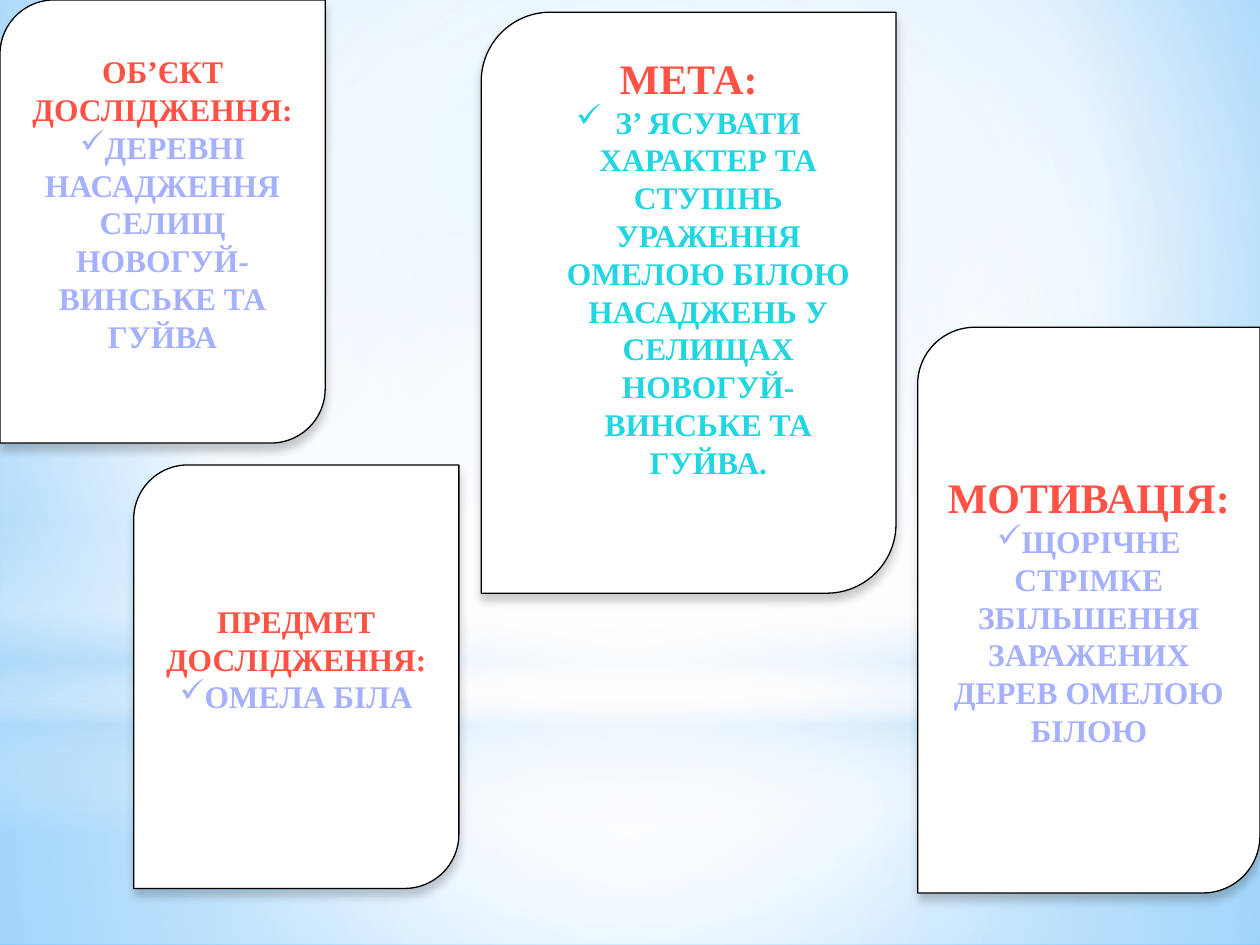
from typing import NamedTuple

from lxml.etree import SubElement
from pptx import Presentation
from pptx.dml.color import RGBColor
from pptx.enum.shapes import MSO_SHAPE
from pptx.enum.text import MSO_ANCHOR, PP_ALIGN
from pptx.oxml import parse_xml
from pptx.oxml.ns import nsdecls, qn
from pptx.util import Pt

COLORS = {
    "white": "FFFFFF",
    "black": "000000",
    "sky": "9ED5FF",
    "azure": "5BB9FF",
    "mist": "B4DCFA",
    "red": "FF5244",
    "cyan": "21D6E0",
    "lilac": "A5B0FF",
}
FONT = "Times New Roman"
BODY_SIZE = 18
BLANK_LINE = 20.7
CENTER = (50, 50, 50, 50)


class Stop(NamedTuple):
    pos: int
    color: str
    alpha: int = 100


class Glow(NamedTuple):
    """A background layer; without a focus its gradient runs downwards."""
    shape: MSO_SHAPE
    top: float
    height: float
    stops: list[Stop]
    focus: tuple[int, int, int, int] | None = CENTER


class Card(NamedTuple):
    left: float
    top: float
    width: float
    height: float
    title: str
    title_size: int
    body: str
    body_color: str = "lilac"
    indent: float = 0
    lines_below: int = 0


BACKGROUND = [Stop(0, "sky"), Stop(60, "white"), Stop(100, "azure")]

GLOWS = [
    Glow(MSO_SHAPE.RECTANGLE, 402, 138,
         [Stop(0, "white", 91), Stop(37, "white", 76), Stop(100, "mist", 79)]),
    Glow(MSO_SHAPE.RECTANGLE, 0, 402,
         [Stop(0, "white", 89), Stop(48, "white", 62), Stop(100, "mist", 79)]),
    Glow(MSO_SHAPE.RECTANGLE, 297, 180,
         [Stop(0, "white", 0), Stop(29, "white", 30), Stop(45, "mist", 40),
          Stop(55, "white", 26), Stop(65, "mist", 60), Stop(100, "white", 0)],
         None),
    Glow(MSO_SHAPE.OVAL, 126, 402, [Stop(0, "white"), Stop(56, "white", 0)]),
]

CARDS = [
    Card(275, 7, 237, 332, "МЕТА:", 24,
         "З’ ЯСУВАТИ ХАРАКТЕР ТА СТУПІНЬ УРАЖЕННЯ ОМЕЛОЮ БІЛОЮ НАСАДЖЕНЬ "
         "У СЕЛИЩАХ НОВОГУЙ-ВИНСЬКЕ ТА ГУЙВА.", "cyan", 22.5, 2),
    Card(524.4, 187, 195.6, 323.3, "МОТИВАЦІЯ:", 24,
         "ЩОРІЧНЕ СТРІМКЕ ЗБІЛЬШЕННЯ ЗАРАЖЕНИХ ДЕРЕВ ОМЕЛОЮ БІЛОЮ"),
    Card(76.4, 265.7, 185.8, 242, "ПРЕДМЕТ ДОСЛІДЖЕННЯ:", 18,
         "ОМЕЛА БІЛА", lines_below=1),
    Card(0, 0, 185.8, 253.2, "ОБ’ЄКТ ДОСЛІДЖЕННЯ:", 18,
         "ДЕРЕВНІ НАСАДЖЕННЯ СЕЛИЩ НОВОГУЙ-ВИНСЬКЕ ТА ГУЙВА", lines_below=1),
]


def rgb(name: str) -> RGBColor:
    return RGBColor.from_string(COLORS[name])


def set_gradient(root, stops: list[Stop], focus) -> None:
    """Put a gradient in place of the first empty fill below root."""
    stop_xml = "".join(
        f'<a:gs pos="{st.pos * 1000}"><a:srgbClr val="{COLORS[st.color]}">'
        f'<a:alpha val="{st.alpha * 1000}"/></a:srgbClr></a:gs>'
        for st in stops)
    if focus:
        l, t, r, b = (v * 1000 for v in focus)
        course = (f'<a:path path="circle"><a:fillToRect l="{l}" t="{t}" '
                  f'r="{r}" b="{b}"/></a:path>')
    else:
        course = '<a:lin ang="5400000" scaled="0"/>'
    grad = parse_xml(f'<a:gradFill {nsdecls("a")} rotWithShape="1">'
                     f'<a:gsLst>{stop_xml}</a:gsLst>{course}</a:gradFill>')
    empty = next(root.iter(qn("a:noFill")))
    empty.getparent().replace(empty, grad)


def add_glow(s, glow: Glow, width: int) -> None:
    sp = s.shapes.add_shape(glow.shape, 0, Pt(glow.top), width, Pt(glow.height))
    sp.shadow.inherit = False
    sp.line.fill.background()
    sp.fill.background()
    set_gradient(sp.element, glow.stops, glow.focus)


def add_soft_shadow(sp) -> None:
    sp.shadow.inherit = False
    effects = sp.element.spPr.find(qn("a:effectLst"))
    shadow = SubElement(effects, qn("a:outerShdw"), blurRad=str(Pt(5)),
                        dist=str(Pt(4)), dir="5400000", rotWithShape="0")
    color = SubElement(shadow, qn("a:srgbClr"), val=COLORS["black"])
    SubElement(color, qn("a:alpha"), val="20000")


def style_paragraph(p, text: str, size: float, color: str) -> None:
    p.text = text
    p.alignment = PP_ALIGN.CENTER
    p.font.name = FONT
    p.font.size = Pt(size)
    p.font.bold = True
    p.font.color.rgb = rgb(color)


def add_check_bullet(p, indent: float) -> None:
    pPr = p._p.get_or_add_pPr()
    pPr.set("marL", str(Pt(indent)))
    pPr.set("indent", str(Pt(-indent)))
    bullet = parse_xml(f'<a:buChar {nsdecls("a")} char="✓"/>')
    pPr.insert(0, bullet)


def add_card(s, card: Card) -> None:
    sp = s.shapes.add_shape(MSO_SHAPE.ROUND_2_DIAG_RECTANGLE, Pt(card.left),
                            Pt(card.top), Pt(card.width), Pt(card.height))
    sp.fill.solid()
    sp.fill.fore_color.rgb = rgb("white")
    sp.line.color.rgb = rgb("black")
    sp.line.width = Pt(0.75)
    add_soft_shadow(sp)

    tf = sp.text_frame
    tf.word_wrap = True
    tf.vertical_anchor = MSO_ANCHOR.MIDDLE
    tf.margin_bottom = Pt(3.6 + BLANK_LINE * card.lines_below)
    style_paragraph(tf.paragraphs[0], card.title, card.title_size, "red")
    p = tf.add_paragraph()
    style_paragraph(p, card.body, BODY_SIZE, card.body_color)
    add_check_bullet(p, card.indent)


def main() -> None:
    prs = Presentation()
    prs.slide_width, prs.slide_height = Pt(720), Pt(540)
    s = prs.slides.add_slide(prs.slide_layouts[6])
    s.background.fill.background()
    set_gradient(s.element, BACKGROUND, (20, 10, 20, 60))
    for glow in GLOWS:
        add_glow(s, glow, prs.slide_width)
    for card in CARDS:
        add_card(s, card)
    prs.save("out.pptx")


if __name__ == "__main__":
    main()
